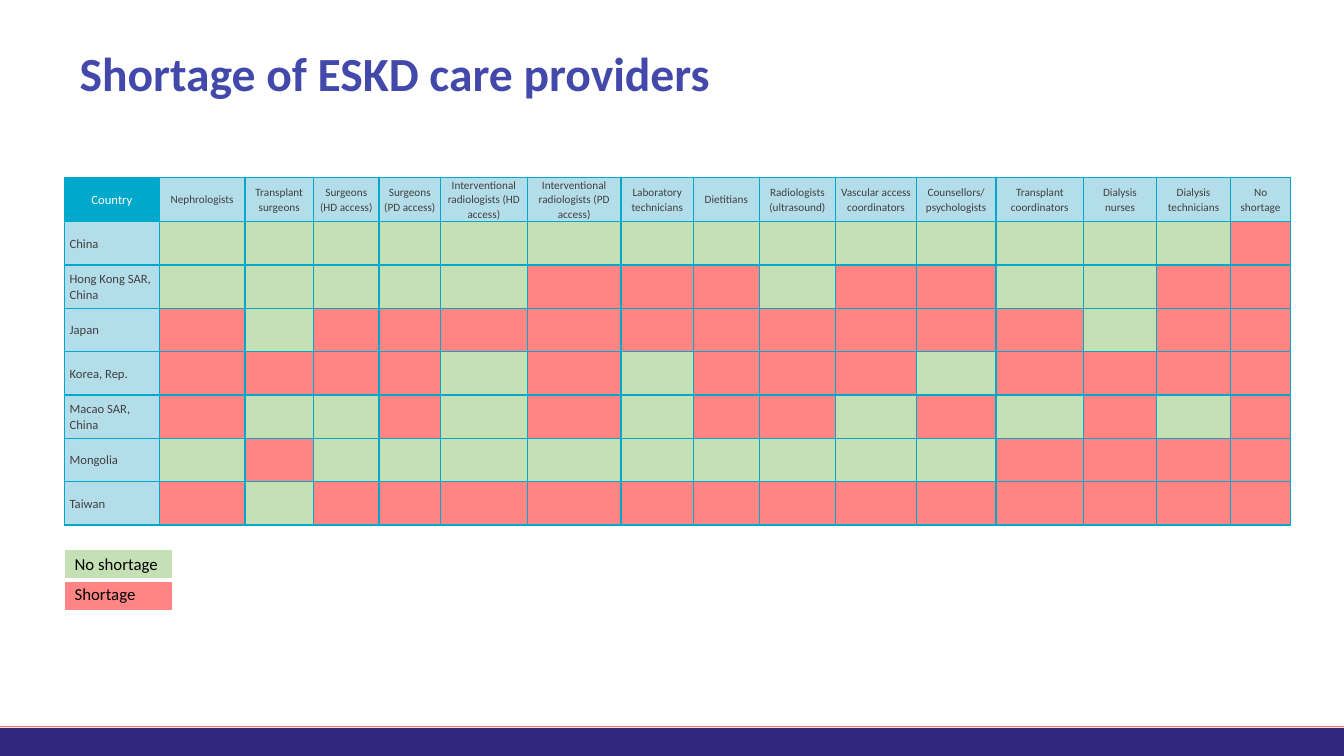
from lxml import etree
from pptx import Presentation
from pptx.dml.color import RGBColor
from pptx.enum.shapes import MSO_CONNECTOR, MSO_SHAPE
from pptx.enum.text import MSO_ANCHOR, MSO_AUTO_SIZE, PP_ALIGN
from pptx.oxml.ns import qn
from pptx.util import Inches, Pt

LEFT, CENTER = PP_ALIGN.LEFT, PP_ALIGN.CENTER
MIDDLE, TOP = MSO_ANCHOR.MIDDLE, MSO_ANCHOR.TOP
RECT, STRAIGHT = MSO_SHAPE.RECTANGLE, MSO_CONNECTOR.STRAIGHT
NO_AUTOFIT = MSO_AUTO_SIZE.NONE

COLORS = {
    "title": "4249AA", "footer": "32257E", "rule": "FE7055",
    "grid": "00A8CB", "head": "B4DDEA", "text": "404040",
    "white": "FFFFFF", "black": "000000",
    "no shortage": "C5E0B4", "shortage": "FF8585",
}
STATUS = {".": "no shortage", "x": "shortage"}

PROVIDERS = [
    "Nephrologists", "Transplant surgeons", "Surgeons (HD access)",
    "Surgeons (PD access)", "Interventional radiologists (HD access)",
    "Interventional radiologists (PD access)", "Laboratory technicians",
    "Dietitians", "Radiologists (ultrasound)", "Vascular access coordinators",
    "Counsellors/psychologists", "Transplant coordinators",
    "Dialysis nurses", "Dialysis technicians", "No shortage",
]
# One mark per provider: "." no shortage, "x" shortage
COUNTRIES = {
    "China": "..............x",
    "Hong Kong SAR, China": ".....xxx.xx..xx",
    "Japan": "x.xxxxxxxxxx.xx",
    "Korea, Rep.": "xxxx.x.xxx.xxxx",
    "Macao SAR, China": "x..x.x.xx.x.x.x",
    "Mongolia": ".x.........xxxx",
    "Taiwan": "x.xxxxxxxxxxxxx",
}
COL_WIDTHS = [0.94, 0.85, 0.68, 0.65, 0.61, 0.86, 0.93, 0.72,
              0.65, 0.76, 0.8, 0.79, 0.87, 0.72, 0.74, 0.59]


def rgb(name):
    return RGBColor.from_string(COLORS[name])


class SlideBuilder:
    font = "Calibri"

    def __init__(self, slide):
        self.s = slide

    def style(self, p, size, color, bold=False, align=LEFT, spacing=None):
        p.alignment = align
        p.line_spacing = spacing
        p.font.name, p.font.size, p.font.bold = self.font, Pt(size), bold
        p.font.color.rgb = rgb(color)

    def title(self, text, x, y, w, h):
        sp = self.s.shapes.title
        sp.left, sp.top, sp.width, sp.height = map(Inches, (x, y, w, h))
        tf = sp.text_frame
        tf.text = text
        tf.auto_size, tf.vertical_anchor = NO_AUTOFIT, MIDDLE
        tf.margin_left = tf.margin_right = 0
        self.style(tf.paragraphs[0], 34, "title", bold=True, spacing=0.9)

    def bar(self, x, y, w, h, color):
        sp = self.s.shapes.add_shape(RECT, *map(Inches, (x, y, w, h)))
        sp.shadow.inherit = False
        sp.fill.solid()
        sp.fill.fore_color.rgb = rgb(color)
        sp.line.fill.background()

    def line(self, x1, y1, x2, y2, color, width):
        sp = self.s.shapes.add_connector(STRAIGHT, *map(Inches, (x1, y1, x2, y2)))
        sp.line.color.rgb, sp.line.width = rgb(color), Pt(width)
        etree.SubElement(sp._element.spPr, qn("a:effectLst"))

    def table(self, x, y, col_widths, row_heights):
        sp = self.s.shapes.add_table(
            len(row_heights), len(col_widths), Inches(x), Inches(y),
            Inches(sum(col_widths)), Inches(sum(row_heights)))
        table = sp.table
        table.first_row = table.horz_banding = False
        for col, width in zip(table.columns, col_widths):
            col.width = Inches(width)
        for row, height in zip(table.rows, row_heights):
            row.height = Inches(height)
        return table

    def borders(self, cell, color, width, bottom):
        tcPr = cell._tc.get_or_add_tcPr()
        for side in "LRTB":
            points = bottom if side == "B" else width
            ln = etree.SubElement(tcPr, qn(f"a:ln{side}"), w=str(Pt(points)))
            fill = etree.SubElement(ln, qn("a:solidFill"))
            etree.SubElement(fill, qn("a:srgbClr"), val=COLORS[color])

    def cell(self, cell, fill, text="", size=9, color="text", align=LEFT,
             border="grid", bottom=1, spacing=1.07, anchor=MIDDLE, margins=(0.05, 0)):
        self.borders(cell, border, 1, bottom)
        cell.fill.solid()
        cell.fill.fore_color.rgb = rgb(fill)
        cell.vertical_anchor = anchor
        cell.margin_left = cell.margin_right = Inches(margins[0])
        cell.margin_top = cell.margin_bottom = Inches(margins[1])
        if text:
            cell.text = text
            self.style(cell.text_frame.paragraphs[0], size, color,
                       align=align, spacing=spacing)


def main():
    prs = Presentation()
    prs.slide_width, prs.slide_height = Inches(13.33), Inches(7.5)
    b = SlideBuilder(prs.slides.add_slide(prs.slide_layouts[5]))

    # Footer and title
    b.bar(0, 7.22, 13.33, 0.28, "footer")
    b.line(0, 7.21, 13.33, 7.21, "rule", 0.75)
    b.title("Shortage of ESKD care providers", 0.79, 0.08, 12.83, 1.36)

    # Shortage table: header row, then one row per country
    table = b.table(0.64, 1.76, COL_WIDTHS, [0.44] + [0.43] * len(COUNTRIES))
    b.cell(table.cell(0, 0), "grid", "Country", color="white", align=CENTER)
    for c, provider in enumerate(PROVIDERS, 1):
        b.cell(table.cell(0, c), "head", provider, size=8, align=CENTER)
    for r, (country, marks) in enumerate(COUNTRIES.items(), 1):
        b.cell(table.cell(r, 0), "head", country)
        for c, mark in enumerate(marks, 1):
            b.cell(table.cell(r, c), STATUS[mark])

    # Legend
    legend = b.table(0.64, 5.45, [1.07], [0.3, 0.3])
    for r, (status, bottom) in enumerate([("no shortage", 3), ("shortage", 1)]):
        b.cell(legend.cell(r, 0), status, status.capitalize(), size=12,
               color="black", border="white", bottom=bottom, spacing=None,
               anchor=TOP, margins=(0.1, 0.05))

    prs.save("out.pptx")


if __name__ == "__main__":
    main()
